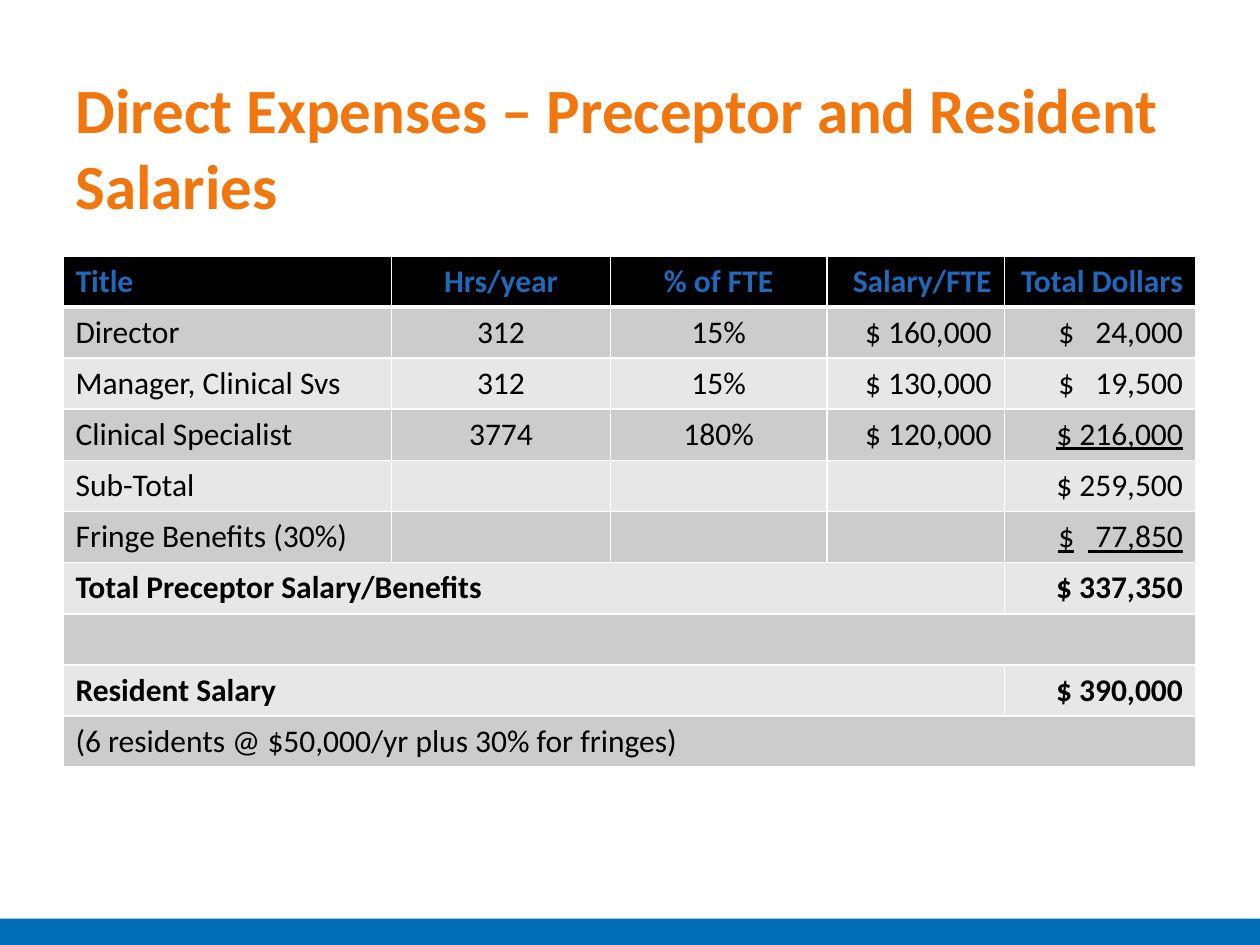
from lxml import etree
from pptx import Presentation
from pptx.dml.color import RGBColor
from pptx.enum.shapes import MSO_SHAPE
from pptx.enum.text import MSO_ANCHOR, PP_ALIGN
from pptx.oxml.ns import qn
from pptx.util import Inches, Pt

RECTANGLE = MSO_SHAPE.RECTANGLE
TOP = MSO_ANCHOR.TOP
LEFT, CENTER, RIGHT = PP_ALIGN.LEFT, PP_ALIGN.CENTER, PP_ALIGN.RIGHT

FONT = "Calibri"
TITLE_ONLY = 5
ORANGE, BLUE, BAR_BLUE = "F2760E", "2068BA", "006EB7"
BLACK, WHITE = "000000", "FFFFFF"
BANDS = ("E7E7E7", "CCCCCC")

COL_WIDTHS = (2.61, 1.74, 1.72, 1.41, 1.52)
COL_ALIGNS = (LEFT, CENTER, CENTER, RIGHT, RIGHT)
ROWS = (
    ("Title", "Hrs/year", "% of FTE", "Salary/FTE", "Total Dollars"),
    ("Director", "312", "15%", "$ 160,000", "$ 24,000"),
    ("Manager, Clinical Svs", "312", "15%", "$ 130,000", "$ 19,500"),
    ("Clinical Specialist", "3774", "180%", "$ 120,000", "$ 216,000"),
    ("Sub-Total", "", "", "", "$ 259,500"),
    ("Fringe Benefits (30%)", "", "", "", "$ 77,850"),
    ("Total Preceptor Salary/Benefits", "", "", "", "$ 337,350"),
    ("", "", "", "", ""),
    ("Resident Salary", "", "", "", "$ 390,000"),
    ("(6 residents @ $50,000/yr plus 30% for fringes)", "", "", "", ""),
)
BOLD_ROWS = (0, 6, 8)
UNDERLINED_TOTALS = (3, 5)
LAST_MERGED_COL = {6: 3, 7: 4, 8: 3, 9: 4}
FULL_AMOUNT_LENGTH = len("$ 216,000")


def rgb(value):
    return RGBColor.from_string(value)


def style_run(r, size, color, bold=False, underline=False):
    r.font.name = FONT
    r.font.size = Pt(size)
    r.font.bold = bold
    r.font.underline = underline
    r.font.color.rgb = rgb(color)


def set_borders(cell, top, bottom):
    """Draw white cell borders; top and bottom widths are in points."""
    tc_pr = cell._tc.get_or_add_tcPr()
    for tag, width in (("a:lnL", 1), ("a:lnR", 1), ("a:lnT", top), ("a:lnB", bottom)):
        ln = etree.SubElement(tc_pr, qn(tag), w=str(Pt(width)))
        fill = etree.SubElement(ln, qn("a:solidFill"))
        etree.SubElement(fill, qn("a:srgbClr"), val=WHITE)


def add_runs(p, text):
    """Add the text, widening the gap after the dollar sign of short amounts."""
    if text.startswith("$") and len(text) < FULL_AMOUNT_LENGTH:
        r = p.add_run()
        r.text = "$"
        r._r.get_or_add_rPr().set("spc", "800")
        text = text[1:]
    p.add_run().text = text


def add_bottom_bar(slide, left, top, width, height):
    s = slide.shapes.add_shape(RECTANGLE, left, top, width, height)
    s.shadow.inherit = False
    s.fill.solid()
    s.fill.fore_color.rgb = rgb(BAR_BLUE)
    s.line.fill.background()


def add_title(slide, left, top, width, height):
    s = slide.shapes.title
    s.left, s.top, s.width, s.height = left, top, width, height
    tf = s.text_frame
    tf.text = "Direct Expenses – Preceptor and Resident Salaries"
    tf.word_wrap = True
    tf.vertical_anchor = TOP
    p = tf.paragraphs[0]
    p.alignment = LEFT
    style_run(p.runs[0], 36, ORANGE, bold=True)


def add_salary_table(slide, left, top, width, height):
    table = slide.shapes.add_table(
        len(ROWS), len(COL_WIDTHS), left, top, width, height).table
    for column, share in zip(table.columns, COL_WIDTHS):
        column.width = int(width * share / sum(COL_WIDTHS))
    for i, texts in enumerate(ROWS):
        header = i == 0
        for j, text in enumerate(texts):
            cell = table.cell(i, j)
            set_borders(cell, 3 if i == 1 else 1, 3 if header else 1)
            cell.fill.solid()
            cell.fill.fore_color.rgb = rgb(BLACK if header else BANDS[i % 2])
            p = cell.text_frame.paragraphs[0]
            p.alignment = COL_ALIGNS[j]
            if text:
                add_runs(p, text)
            for r in p.runs:
                style_run(r, 18, BLUE if header else BLACK, i in BOLD_ROWS,
                          j == 4 and i in UNDERLINED_TOTALS)
    for i, last in LAST_MERGED_COL.items():
        table.cell(i, 0).merge(table.cell(i, last))


def main():
    prs = Presentation()
    prs.slide_width, prs.slide_height = Inches(10), Inches(7.5)
    slide = prs.slides.add_slide(prs.slide_layouts[TITLE_ONLY])
    add_bottom_bar(slide, 0, Inches(7.29), prs.slide_width, Inches(0.25))
    add_title(slide, Inches(0.5), Inches(0.51), Inches(9), Inches(0.79))
    add_salary_table(slide, Inches(0.5), Inches(2.03), Inches(8.99), Inches(4.06))
    prs.save("out.pptx")


if __name__ == "__main__":
    main()
